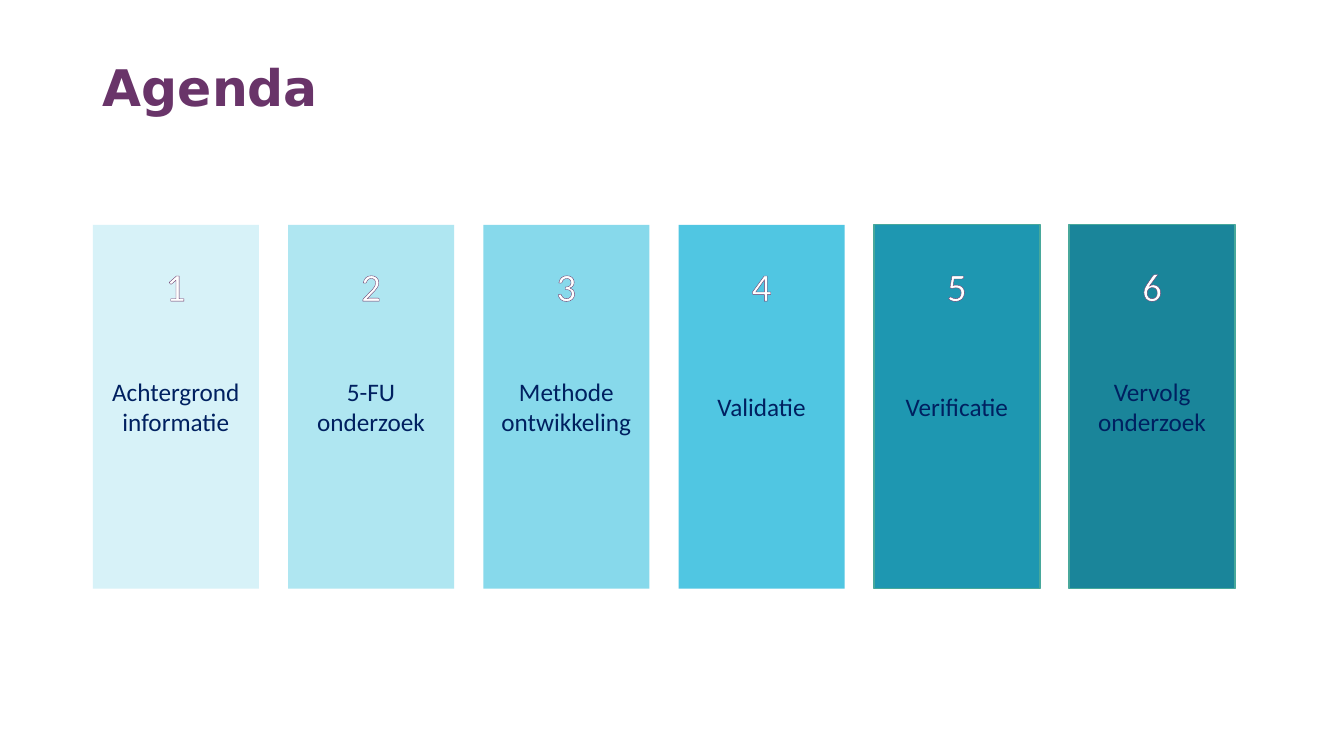
from dataclasses import dataclass

from lxml.etree import SubElement
from pptx import Presentation
from pptx.dml.color import RGBColor as Color
from pptx.enum.shapes import MSO_SHAPE as Shape
from pptx.enum.text import MSO_ANCHOR as Anchor, MSO_AUTO_SIZE as AutoSize, PP_ALIGN as Align
from pptx.oxml.ns import qn
from pptx.util import Inches, Pt


@dataclass(frozen=True)
class Theme:
    title_font: str = "DejaVu Sans"
    body_font: str = "Calibri"
    title_color: str = "693469"
    label_color: str = "002060"
    number_color: str = "FFFFFF"
    number_outline: str = "663367"
    card_border: str = "48A89B"
    title_size: int = 36
    label_size: int = 18
    number_size: int = 28


@dataclass(frozen=True)
class Grid:
    left: float = 0.92
    right: float = 12.25
    gap: float = 0.29
    columns: int = 6
    card_top: float = 2.23
    card_height: float = 3.61
    number_top: float = 2.55
    number_width: float = 0.4
    number_height: float = 0.57

    @property
    def width(self):
        return (self.right - self.left - self.gap * (self.columns - 1)) / self.columns

    def column_left(self, column):
        return self.left + column * (self.width + self.gap)


class AgendaSlide:
    """Draws the agenda elements on one slide in a shared style."""

    def __init__(self, slide, theme, grid):
        self.slide, self.theme, self.grid = slide, theme, grid

    def add_text(self, paragraph, text, font, size, color, bold=False):
        run = paragraph.add_run()
        run.text = text
        run.font.name, run.font.size, run.font.bold = font, Pt(size), bold
        run.font.color.rgb = Color.from_string(color)
        return run

    def title(self, text):
        theme, shape = self.theme, self.slide.shapes.title
        shape.left, shape.top = Inches(self.grid.left), Inches(0.51)
        shape.width, shape.height = Inches(10.77), Inches(1.45)
        frame = shape.text_frame
        frame.auto_size, frame.vertical_anchor = AutoSize.NONE, Anchor.TOP
        paragraph = frame.paragraphs[0]
        paragraph.alignment = Align.LEFT
        self.add_text(paragraph, text, theme.title_font, theme.title_size, theme.title_color, True)

    def card(self, column, label, fill, bordered):
        theme, grid = self.theme, self.grid
        shape = self.slide.shapes.add_shape(
            Shape.RECTANGLE, Inches(grid.column_left(column)), Inches(grid.card_top),
            Inches(grid.width), Inches(grid.card_height))
        shape.shadow.inherit = False
        shape.fill.solid()
        shape.fill.fore_color.rgb = Color.from_string(fill)
        if bordered:
            shape.line.color.rgb = Color.from_string(theme.card_border)
            shape.line.width = Pt(1)
        else:
            shape.line.fill.background()
        frame = shape.text_frame
        frame.word_wrap, frame.vertical_anchor = True, Anchor.MIDDLE
        paragraph = frame.paragraphs[0]
        paragraph.alignment = Align.CENTER
        self.add_text(paragraph, label, theme.body_font, theme.label_size, theme.label_color)

    def number(self, column):
        theme, grid = self.theme, self.grid
        left = grid.column_left(column) + (grid.width - grid.number_width) / 2
        box = self.slide.shapes.add_textbox(
            Inches(left), Inches(grid.number_top),
            Inches(grid.number_width), Inches(grid.number_height))
        frame = box.text_frame
        frame.word_wrap, frame.auto_size = False, AutoSize.SHAPE_TO_FIT_TEXT
        paragraph = frame.paragraphs[0]
        paragraph.alignment = Align.CENTER
        run = self.add_text(paragraph, str(column + 1), theme.body_font,
                            theme.number_size, theme.number_color)
        self.outline(run, theme.number_outline)

    def outline(self, run, color):
        properties = run.font._element
        line = SubElement(properties, qn("a:ln"), w=str(Pt(0.75)))
        fill = SubElement(line, qn("a:solidFill"))
        SubElement(fill, qn("a:srgbClr"), val=color)
        properties.insert(0, line)


TOPICS = [
    ("Achtergrond informatie", "D7F2F8", False),
    ("5-FU onderzoek", "AFE6F1", False),
    ("Methode ontwikkeling", "87D9EB", False),
    ("Validatie", "50C6E2", False),
    ("Verificatie", "1E97B1", True),
    ("Vervolg onderzoek", "1A859A", True),
]


def main():
    presentation = Presentation()
    presentation.slide_width, presentation.slide_height = Inches(13.33), Inches(7.5)
    slide = presentation.slides.add_slide(presentation.slide_layouts.get_by_name("Title Only"))
    agenda = AgendaSlide(slide, Theme(), Grid(columns=len(TOPICS)))
    agenda.title("Agenda")
    for column, (label, fill, bordered) in enumerate(TOPICS):
        agenda.card(column, label, fill, bordered)
        agenda.number(column)
    presentation.save("out.pptx")


if __name__ == "__main__":
    main()
